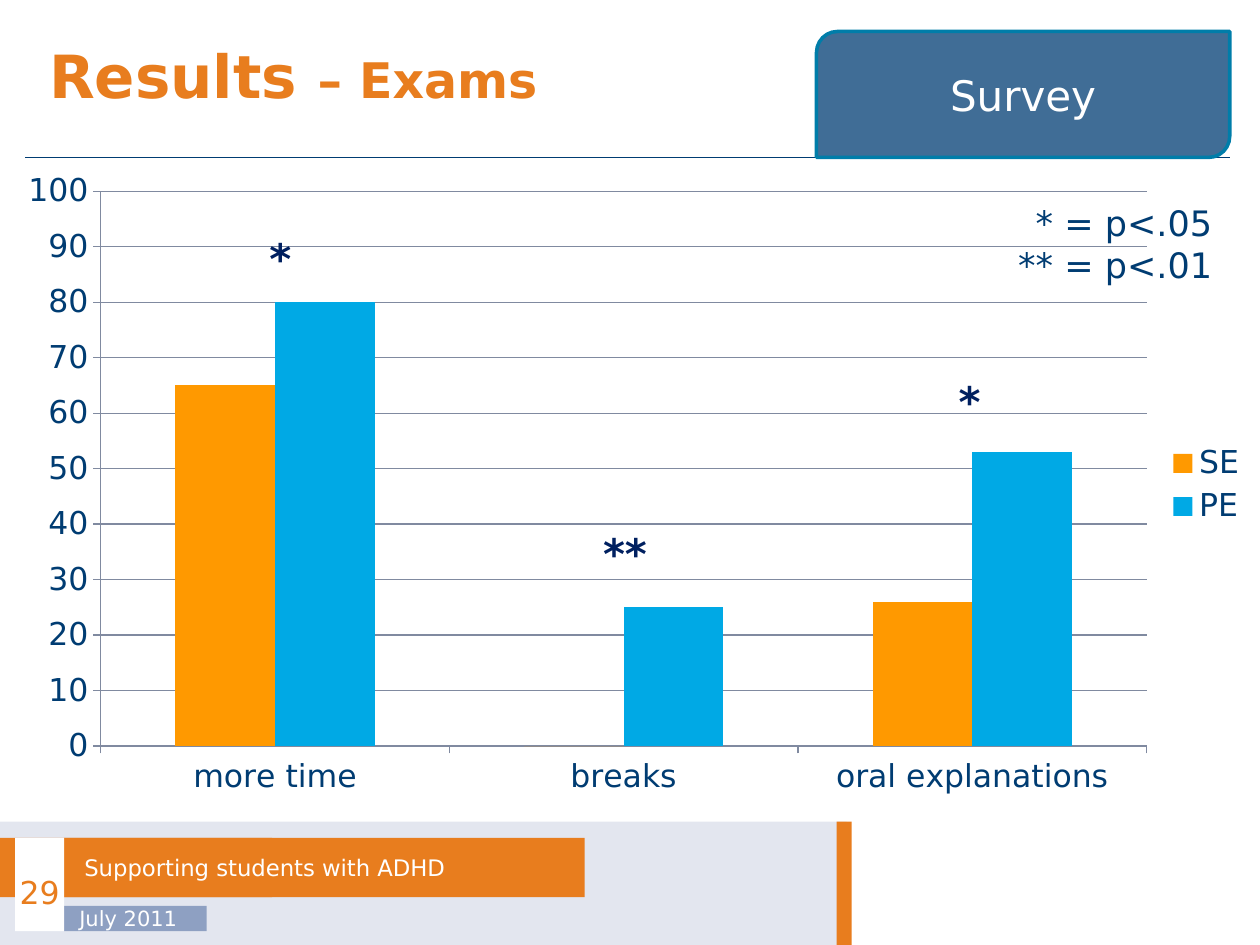
from dataclasses import dataclass

from lxml import etree
from pptx import Presentation
from pptx import util as u
from pptx.chart.data import CategoryChartData
from pptx.dml.color import RGBColor
from pptx.enum import chart as ch, shapes, text
from pptx.oxml import parse_xml
from pptx.oxml.ns import qn

UNIT = u.Inches(0.1)  # the slide is a grid of 100 columns by 75 rows
COLS, ROWS = 100, 75


@dataclass(frozen=True)
class Theme:
    font: str = "DejaVu Sans"
    white: str = "FFFFFF"
    orange: str = "E87D1E"
    pale: str = "E3E6EF"
    slate: str = "8EA0C2"
    navy: str = "003C72"
    star: str = "002060"
    tab: str = "406D96"
    edge: str = "007DA9"
    grid: str = "808AA0"
    bars: tuple = ("FF9900", "00A9E5")
    head: int = 34
    sub: int = 28
    mark: int = 24
    key: int = 20
    body: int = 18
    foot: int = 13
    date: int = 12


T = Theme()
LEFT, MID, RIGHT = text.PP_ALIGN.LEFT, text.PP_ALIGN.CENTER, text.PP_ALIGN.RIGHT
RECT = shapes.MSO_SHAPE.RECTANGLE


def rgb(hue):
    return RGBColor.from_string(hue)


def inner(box, col, row, wide, high):
    """Place a part by columns and rows from the top left of its region."""
    return box[0] + col, box[1] + row, wide, high


def emu(box):
    return [round(n * UNIT) for n in box]


def style(font, size, hue, bold=False):
    font.name, font.size, font.bold = T.font, u.Pt(size), bold
    font.color.rgb = rgb(hue)


def write(shape, words, size, hue, align=MID, pads=(1, 0.5, 1, 0.5),
          bold=False, anchor=text.MSO_ANCHOR.MIDDLE, space=None):
    """Fill a shape with text; pads are left, top, right, bottom."""
    frame = shape.text_frame
    frame.word_wrap, frame.vertical_anchor = True, anchor
    (frame.margin_left, frame.margin_top,
     frame.margin_right, frame.margin_bottom) = emu(pads)
    frame.text = words
    for para in frame.paragraphs:
        para.alignment = align
        para.line_spacing = space
        for run in para.runs:
            style(run.font, size, hue, bold)
    return frame


def block(slide, box, fill, kind=RECT):
    shape = slide.shapes.add_shape(kind, *emu(box))
    shape.shadow.inherit = False
    shape.fill.solid()
    shape.fill.fore_color.rgb = rgb(fill)
    shape.line.fill.background()
    return shape


def label(slide, box, words, size, hue, **look):
    return write(slide.shapes.add_textbox(*emu(box)), words, size, hue, **look)


def header(slide, box):
    left, top, wide, high = box
    x, y, reach, _ = emu((left + 2, top + high, wide - 4.4, 0))
    rule = slide.shapes.add_connector(
        shapes.MSO_CONNECTOR.STRAIGHT, x, y, x + reach, y)
    rule.line.color.rgb, rule.line.width = rgb(T.navy), u.Pt(0.5)
    etree.SubElement(rule._element.spPr, qn("a:effectLst"))

    frame = label(slide, box, "Results ", T.head, T.orange, align=LEFT,
                  pads=(3.9, 2, 3.9, 1.6), bold=True, space=0.8)
    run = frame.paragraphs[0].add_run()
    run.text = "– Exams"
    style(run.font, T.sub, T.orange, True)

    tab = block(slide, inner(box, 64.8, 2.5, 32.8, 10), T.tab,
                shapes.MSO_SHAPE.ROUND_2_DIAG_RECTANGLE)
    tab.line.color.rgb, tab.line.width = rgb(T.edge), u.Pt(2)
    write(tab, "Survey", T.mark, T.white)


def footer(slide, box):
    high = box[3]
    for col, row, wide, tall, hue in (
            (0, 0, 67.2, high, T.pale), (0, 1.3, 21.6, 4.7, T.orange),
            (67.2, 0, 32.8, high, T.white), (66.4, 0, 1.2, high, T.orange)):
        block(slide, inner(box, col, row, wide, tall), hue)
    for col, row, wide, tall, fill, words, size, hue, align, pads in (
            (5.1, 6.7, 11.3, 2, T.slate, "July 2011", T.date, T.white,
             LEFT, (1.2, 0, 1.2, 0)),
            (5.1, 1.3, 41.3, 4.7, T.orange, "Supporting students with ADHD",
             T.foot, T.white, LEFT, (1.6, 0, 1.6, 0)),
            (1.2, 1.3, 3.9, 7.4, T.white, "29", T.body, T.orange,
             MID, (0, 1.2, 0, 0))):
        part = block(slide, inner(box, col, row, wide, tall), fill)
        write(part, words, size, hue, align=align, pads=pads)


def pin(plot, **share):
    """Fix the inner plot area by shares of the chart's size."""
    old = plot.find(qn("c:layout"))
    if old is not None:
        plot.remove(old)
    parts = "".join(f'<c:{k} val="{v}"/>' for k, v in share.items())
    plot.insert(0, parse_xml(
        '<c:layout xmlns:c="http://schemas.openxmlformats.org/drawingml/2006/'
        'chart"><c:manualLayout><c:layoutTarget val="inner"/>'
        '<c:xMode val="edge"/><c:yMode val="edge"/>'
        f'{parts}</c:manualLayout></c:layout>'))


def graph(slide, box):
    data = CategoryChartData()
    data.categories = ["more time", "breaks", "oral explanations"]
    data.add_series("SE", (65, 0, 26))
    data.add_series("PE", (80, 25, 53))
    chart = slide.shapes.add_chart(
        ch.XL_CHART_TYPE.COLUMN_CLUSTERED, *emu(box), data).chart
    style(chart.font, T.body, T.navy)
    chart.has_title = False
    chart.has_legend = True
    chart.legend.position = ch.XL_LEGEND_POSITION.RIGHT
    chart.legend.include_in_layout = False

    plot = chart.plots[0]
    plot.vary_by_categories = False
    plot.gap_width, plot.overlap = 150, 0
    for series, hue in zip(plot.series, T.bars):
        series.format.fill.solid()
        series.format.fill.fore_color.rgb = rgb(hue)

    axis = chart.value_axis
    axis.minimum_scale, axis.maximum_scale, axis.major_unit = 0, 100, 10
    axis.has_major_gridlines = True
    for part in (axis, chart.category_axis, axis.major_gridlines):
        part.format.line.color.rgb = rgb(T.grid)
        part.format.line.width = u.Pt(0.75)
    for part in (axis, chart.category_axis):
        part.major_tick_mark = ch.XL_TICK_MARK.OUTSIDE
    pin(chart._chartSpace.chart.plotArea, x=0.08, y=0.05, w=0.83, h=0.85)


def marks(slide, box):
    top = text.MSO_ANCHOR.TOP
    for col, row, wide, words in ((19.5, 5.4, 5.5, "*"),
                                  (74.2, 16.7, 5.5, "*"),
                                  (44.5, 28.8, 10.2, "**")):
        label(slide, inner(box, col, row, wide, 5), words, T.mark, T.star,
              bold=True, anchor=top)
    label(slide, inner(box, 75.2, 2.9, 22, 7.7), "* = p<.05\n** = p<.01",
          T.key, T.navy, align=RIGHT, anchor=top)


def main():
    deck = Presentation()
    deck.slide_width, deck.slide_height = COLS * UNIT, ROWS * UNIT
    slide = deck.slides.add_slide(deck.slide_layouts[6])
    body = (0, 12.6, COLS, 51.8)
    footer(slide, (0, 65.2, COLS, 9.8))
    header(slide, (0, 0, COLS, 12.5))
    graph(slide, body)
    marks(slide, body)
    deck.save("out.pptx")


if __name__ == "__main__":
    main()
